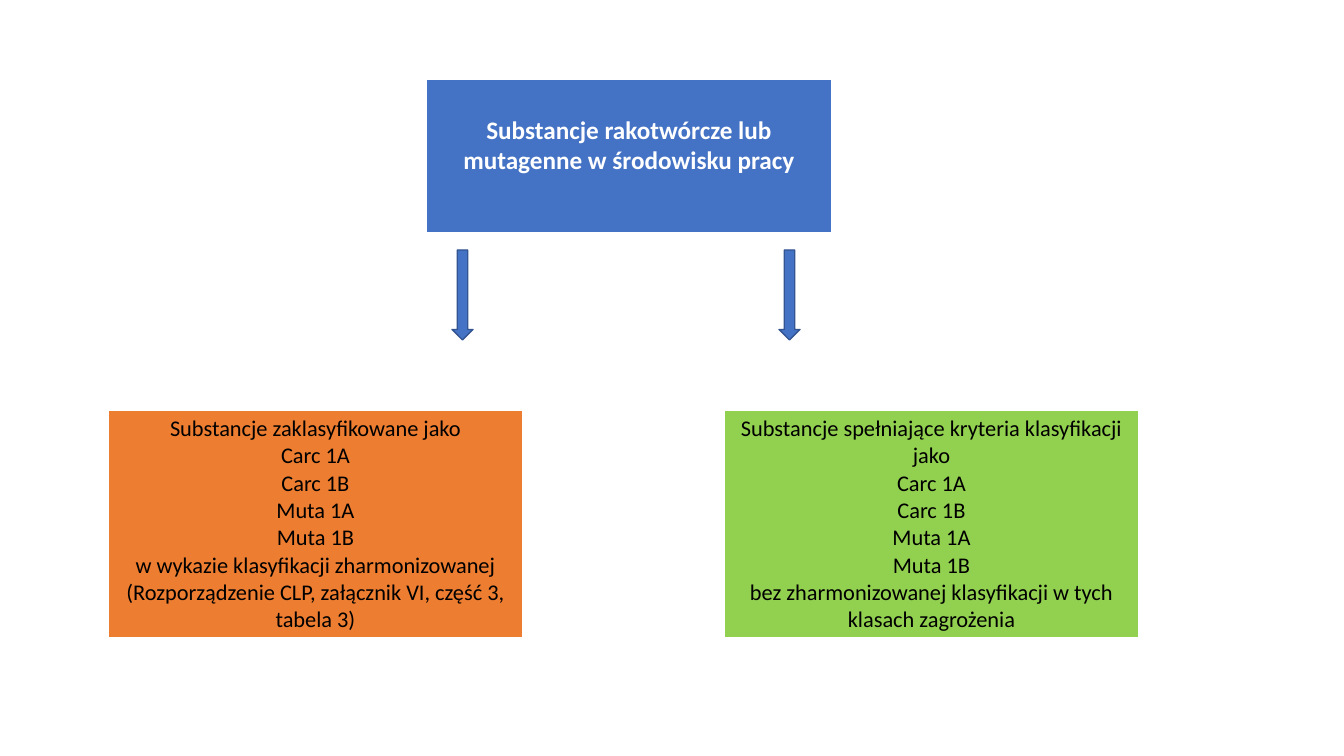
from dataclasses import dataclass

from lxml import etree
from pptx import Presentation, util as u
from pptx.dml.color import RGBColor
from pptx.enum import shapes, text
from pptx.oxml import ns

PX = 12192000 / 1344  # EMU in one px
COLORS = {
    "blue": "4472C4",
    "edge": "325491",
    "orange": "ED7D31",
    "green": "92D050",
    "white": "FFFFFF",
    "black": "000000",
}
BORDERS = {"lnL": 1, "lnR": 1, "lnT": 1, "lnB": 3}  # widths in points
CLASSES = ["Carc 1A", "Carc 1B", "Muta 1A", "Muta 1B"]


@dataclass
class Box:
    left: int
    top: int
    width: int
    height: int
    fill: str
    lines: list[str]
    ink: str = "black"
    size: int = 16
    bold: bool = False
    inset: int = 5


def px(count: int) -> u.Emu:
    return u.Emu(round(count * PX))


def rgb(name: str) -> RGBColor:
    return RGBColor.from_string(COLORS[name])


def add_edges(cell) -> None:
    props = cell._tc.get_or_add_tcPr()
    for place, (side, width) in enumerate(BORDERS.items()):
        line = etree.Element(ns.qn(f"a:{side}"), w=str(u.Pt(width)))
        fill = etree.SubElement(line, ns.qn("a:solidFill"))
        etree.SubElement(fill, ns.qn("a:srgbClr"), val=COLORS["white"])
        props.insert(place, line)


def add_box(slide, box: Box) -> None:
    area = map(px, (box.left, box.top, box.width, box.height))
    table = slide.shapes.add_table(1, 1, *area).table
    table.first_row = table.horz_banding = False
    cell = table.cell(0, 0)
    cell.fill.solid()
    cell.fill.fore_color.rgb = rgb(box.fill)
    cell.margin_top = px(box.inset)
    add_edges(cell)
    cell.text_frame.text = "\n".join(box.lines)
    for para in cell.text_frame.paragraphs:
        para.alignment = text.PP_ALIGN.CENTER
        for run in para.runs:
            font = run.font
            font.name, font.size, font.bold = "Calibri", u.Pt(box.size), box.bold
            font.color.rgb = rgb(box.ink)


def add_arrow(slide, left: int) -> None:
    area = map(px, (left, 250, 21, 90))
    arrow = slide.shapes.add_shape(shapes.MSO_SHAPE.DOWN_ARROW, *area)
    arrow.shadow.inherit = False
    arrow.fill.solid()
    arrow.fill.fore_color.rgb = rgb("blue")
    arrow.line.color.rgb = rgb("edge")
    arrow.line.width = u.Pt(1)


BOXES = [
    # Heading
    Box(426, 79, 406, 155, "blue",
        ["Substancje rakotwórcze lub mutagenne w środowisku pracy"],
        ink="white", size=18, bold=True, inset=36),
    # Two groups of substances
    Box(108, 410, 415, 225, "orange",
        ["Substancje zaklasyfikowane jako", *CLASSES,
         "w wykazie klasyfikacji zharmonizowanej",
         "(Rozporządzenie CLP, załącznik VI, część 3, tabela 3)"]),
    Box(724, 410, 415, 225, "green",
        ["Substancje spełniające kryteria klasyfikacji jako", *CLASSES,
         "bez zharmonizowanej klasyfikacji w tych klasach zagrożenia"]),
]


def main() -> None:
    deck = Presentation()
    deck.slide_width, deck.slide_height = px(1344), px(756)
    slide = deck.slides.add_slide(deck.slide_layouts[6])
    for box in BOXES:
        add_box(slide, box)
    # Arrows from the heading to the groups
    for left in (452, 779):
        add_arrow(slide, left)
    deck.save("out.pptx")


if __name__ == "__main__":
    main()
